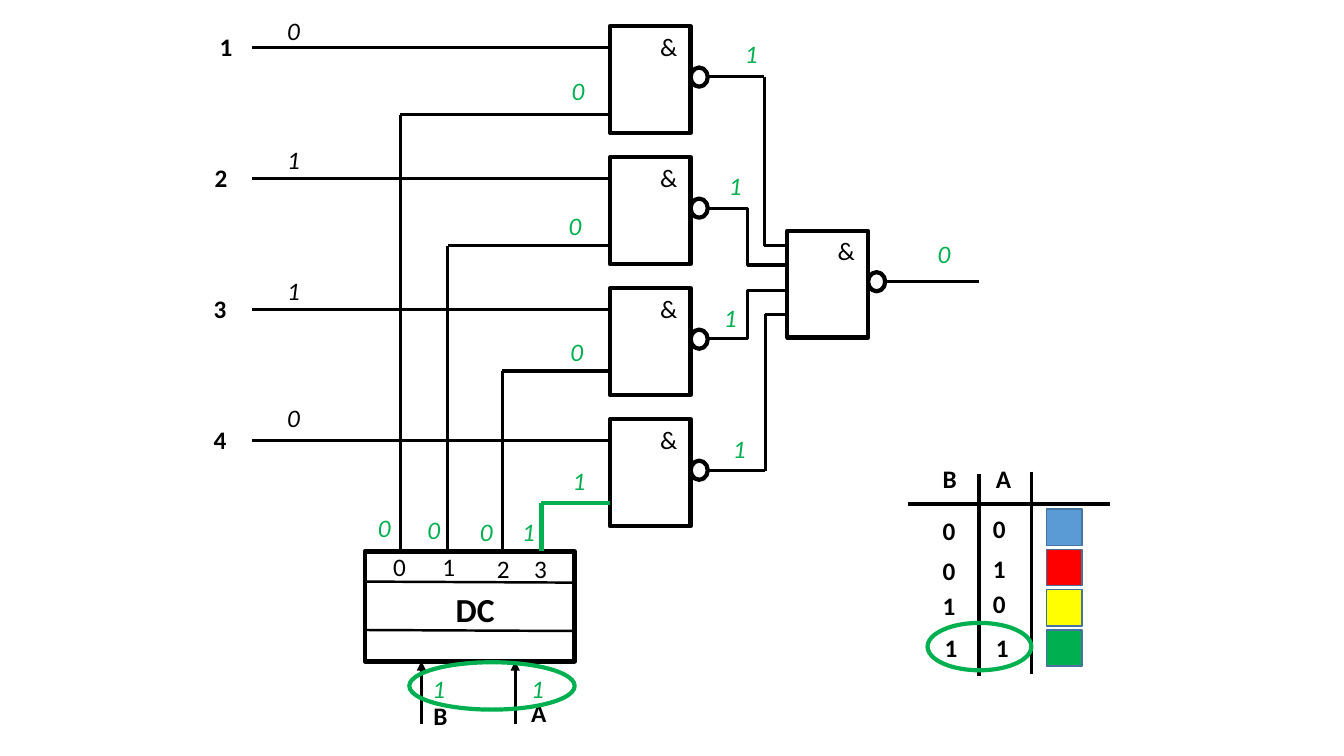
import itertools

import pptx
import pptx.dml.color
import pptx.enum.shapes
import pptx.enum.text
import pptx.oxml
import pptx.oxml.ns
import pptx.util

COLOURS = {
    "ink": "000000",
    "paper": "FFFFFF",
    "active": "00B050",
    "blue": "5B9BD5",
    "red": "FF0000",
    "yellow": "FFFF00",
    "swatch edge": "43739E",
}
SHAPES = pptx.enum.shapes.MSO_SHAPE
CONNECTORS = pptx.enum.shapes.MSO_CONNECTOR
LANE_STEP = 130
GATE_LEFT = 605
DECODER_TOP = 547


def colour(name):
    return pptx.dml.color.RGBColor.from_string(COLOURS[name])


class Sketch:
    """Draws on one page; all lengths are px, 100 to the inch."""

    scale = 9144
    font = "Calibri"

    def __init__(self, page):
        self.shapes = page.shapes

    def emu(self, *lengths):
        return [pptx.util.Emu(length * self.scale) for length in lengths]

    def shape(self, kind, left, top, width, height, fill=None, line="ink", weight=3):
        shape = self.shapes.add_shape(kind, *self.emu(left, top, width, height))
        shape.shadow.inherit = False
        if fill:
            shape.fill.solid()
            shape.fill.fore_color.rgb = colour(fill)
        else:
            shape.fill.background()
        shape.line.color.rgb = colour(line)
        shape.line.width = pptx.util.Pt(weight)

    def label(self, text, left, top, width=38, size=18, ink="ink", bold=False, italic=False):
        height = 50 if size > 18 else 40
        box = self.shapes.add_textbox(*self.emu(left, top, width, height))
        frame = box.text_frame
        frame.word_wrap = True
        frame.auto_size = pptx.enum.text.MSO_AUTO_SIZE.SHAPE_TO_FIT_TEXT
        frame.text = text
        font = frame.paragraphs[0].runs[0].font
        font.name = self.font
        font.size = pptx.util.Pt(size)
        font.bold = bold
        font.italic = italic
        font.color.rgb = colour(ink)

    def signal(self, text, left, top, ink="active"):
        self.label(text, left, top, ink=ink, italic=True)

    def line(self, start, end, weight=2.25, ink="ink", kind=CONNECTORS.STRAIGHT, arrow=False):
        line = self.shapes.add_connector(kind, *self.emu(*start, *end))
        line.line.color.rgb = colour(ink)
        line.line.width = pptx.util.Pt(weight)
        properties = line._element.spPr
        if arrow:
            tail = pptx.oxml.parse_xml(
                f'<a:tailEnd {pptx.oxml.ns.nsdecls("a")} type="triangle"/>')
            line.line._get_or_add_ln().append(tail)
        properties.append(pptx.oxml.parse_xml(
            f'<a:effectLst {pptx.oxml.ns.nsdecls("a")}/>'))

    def wire(self, *points, weight=2.25, ink="ink"):
        """Join the points in turn with straight connectors."""
        for start, end in itertools.pairwise(points):
            self.line(start, end, weight, ink)

    def gate(self, left, top):
        """Draw a NAND gate with its output bubble."""
        self.shape(SHAPES.RECTANGLE, left, top, 80, 106, fill="paper")
        self.label("&", left + 40, top, width=37)
        self.shape(SHAPES.OVAL, left + 80, top + 41, 17, 19, fill="paper")


def draw_inputs(sketch):
    # name, name left, data bit, bit top
    lanes = [("1", 208, "0", 10), ("2", 203, "1", 138),
             ("3", 202, "1", 268), ("4", 202, "0", 394)]
    for index, (name, left, bit, bit_top) in enumerate(lanes):
        offset = index * LANE_STEP
        sketch.gate(GATE_LEFT, 26 + offset)
        sketch.line((250, 47 + offset), (GATE_LEFT, 47 + offset), weight=1.75)
        sketch.label(name, left, 26 + offset, bold=True)
        sketch.signal(bit, 275, bit_top, ink="ink")


def draw_output(sketch):
    sketch.gate(781, 229)
    sketch.wire((702, 76), (758, 76), (758, 244), (781, 244))
    sketch.line((702, 207), (781, 263), kind=CONNECTORS.ELBOW)
    sketch.line((702, 336), (781, 288), weight=2, kind=CONNECTORS.ELBOW)
    sketch.wire((702, 467), (759, 467), (759, 312), (781, 312))
    sketch.line((879, 279), (971, 279), weight=2)
    for left, top in [(729, 33), (713, 164), (708, 295), (717, 425)]:
        sketch.signal("1", left, top)
    sketch.signal("0", 920, 232)


def draw_decoder(sketch):
    left, right, bottom = 362, 570, 656
    sketch.shape(SHAPES.RECTANGLE, left, DECODER_TOP, right - left,
                 bottom - DECODER_TOP, weight=3.25)
    for y in (577, 625):
        sketch.line((left, y), (right, y + 1), weight=1.75)
    sketch.label("DC", 442, 579, width=68, size=24, bold=True)

    # wire x, wire y, port label place, bit, bit place at port, bit place at gate
    ports = [(397, 114, (380, 542), "0", (365, 503), (557, 70)),
             (444, 244, (429, 542), "0", (414, 505), (554, 204)),
             (498, 368, (483, 544), "0", (466, 507), (556, 329)),
             (537, 499, (520, 544), "1", (508, 507), (558, 457))]
    for number, (x, y, place, bit, port_bit, gate_bit) in enumerate(ports):
        ink, weight = ("active", 3) if bit == "1" else ("ink", 2.25)
        sketch.wire((GATE_LEFT, y), (x, y), (x, DECODER_TOP), weight=weight, ink=ink)
        sketch.label(str(number), *place)
        sketch.signal(bit, *port_bit)
        sketch.signal(bit, *gate_bit)

    for name, x, name_place, bit_left in [("B", 418, (420, 690), 419),
                                          ("A", 511, (517, 687), 517)]:
        sketch.line((x, 718), (x, bottom), arrow=True)
        sketch.label(name, *name_place, bold=True)
        sketch.signal("1", bit_left, 663)
    sketch.shape(SHAPES.OVAL, 406, 657, 164, 47, line="active")


def draw_truth_table(sketch):
    sketch.line((971, 470), (971, 671), weight=2.75)
    sketch.line((1023, 468), (1023, 669), weight=2.75)
    sketch.line((901, 500), (1101, 500), weight=2.75)
    sketch.label("B", 925, 455, bold=True)
    sketch.label("A", 978, 455, bold=True)
    rows = [("0", (925, 506), "0", (975, 504), "blue"),
            ("0", (925, 546), "1", (975, 544), "red"),
            ("1", (925, 581), "0", (975, 579), "yellow"),
            ("1", (927, 622), "1", (978, 622), "active")]
    for index, (b_bit, b_place, a_bit, a_place, fill) in enumerate(rows):
        sketch.label(b_bit, *b_place, bold=True)
        sketch.label(a_bit, *a_place, bold=True)
        sketch.shape(SHAPES.RECTANGLE, 1038, 505 + 40 * index, 35, 36,
                     fill=fill, line="swatch edge", weight=1)
    sketch.shape(SHAPES.OVAL, 920, 618, 103, 47, line="active")


def main():
    deck = pptx.Presentation()
    deck.slide_width = pptx.util.Inches(13.33)
    deck.slide_height = pptx.util.Inches(7.5)
    sketch = Sketch(deck.slides.add_slide(deck.slide_layouts[6]))
    draw_inputs(sketch)
    draw_output(sketch)
    draw_decoder(sketch)
    draw_truth_table(sketch)
    deck.save("out.pptx")


if __name__ == "__main__":
    main()
